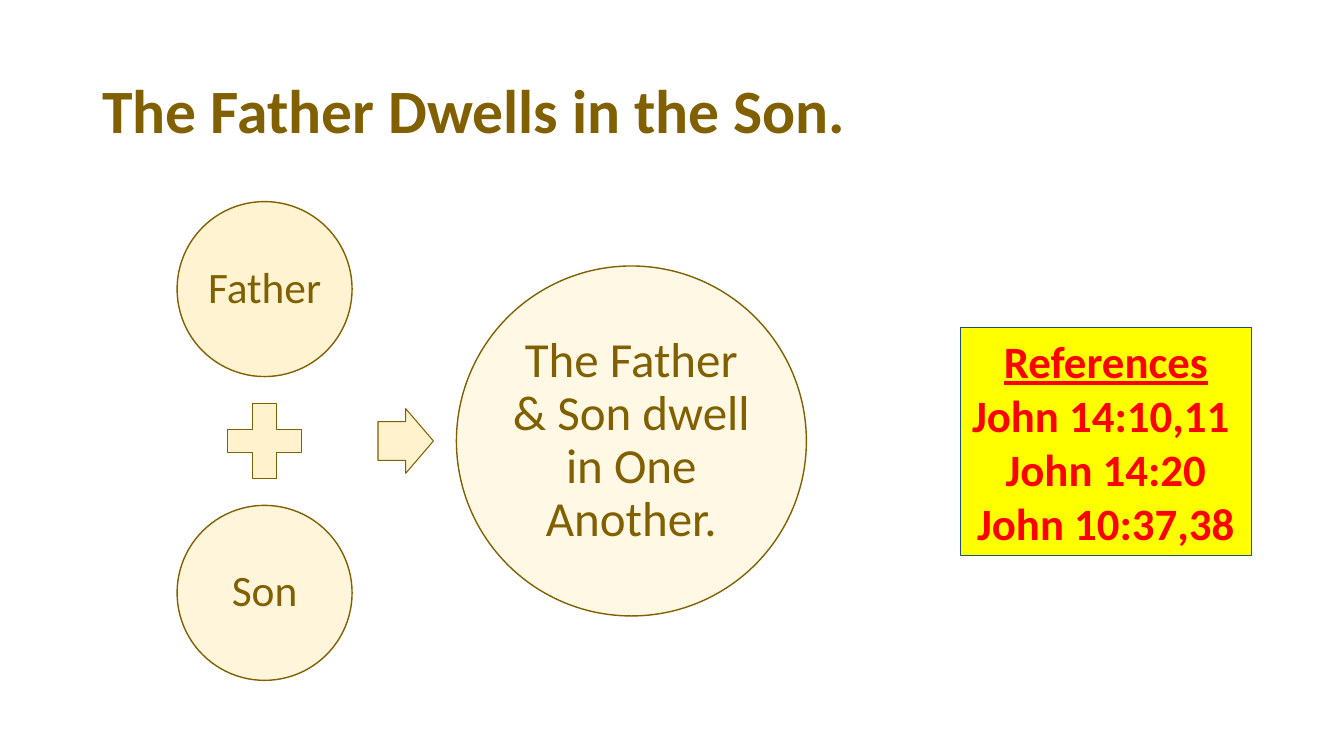
from lxml import etree
from pptx import Presentation
from pptx import util as u
from pptx.dml.color import RGBColor
from pptx.enum import shapes, text
from pptx.oxml.ns import qn

COLORS = {"brown": "806000", "cream": "FFF2CC", "yellow": "FFFF00",
          "red": "FF0000", "navy": "1F4E79"}
FONT = "Calibri"
KIND = shapes.MSO_SHAPE


def color(name):
    return RGBColor.from_string(COLORS[name])


def style_paragraph(paragraph, size, name, align, bold=False):
    paragraph.alignment = align
    font = paragraph.font
    font.name, font.size, font.bold = FONT, u.Pt(size), bold
    font.color.rgb = color(name)


def add_block(slide, kind, box, fill="cream", line="brown", width=0.75):
    shape = slide.shapes.add_shape(kind, *(u.Pt(length) for length in box))
    shape.shadow.inherit = False
    shape.fill.solid()
    shape.fill.fore_color.rgb = color(fill)
    shape.line.color.rgb = color(line)
    shape.line.width = u.Pt(width)
    return shape


def add_circle(slide, left, top, diameter, label, size, opacity, inset):
    box = (left, top, diameter, diameter)
    circle = add_block(slide, KIND.OVAL, box, width=1)
    # Opacity of the fill, in percent
    fill_color = circle.fill._xPr.find(qn("a:solidFill"))[0]
    etree.SubElement(fill_color, qn("a:alpha"), val=str(opacity * 1000))
    frame = circle.text_frame
    frame.word_wrap = True
    frame.margin_left = frame.margin_right = u.Pt(inset)
    frame.margin_top = frame.margin_bottom = u.Pt(inset)
    paragraph = frame.paragraphs[0]
    paragraph.text = label
    paragraph.line_spacing = 0.9
    style_paragraph(paragraph, size, "brown", text.PP_ALIGN.CENTER)


def add_title(slide, left, top, width, height, title):
    placeholder = slide.shapes.title
    placeholder.left, placeholder.top = u.Pt(left), u.Pt(top)
    placeholder.width, placeholder.height = u.Pt(width), u.Pt(height)
    frame = placeholder.text_frame
    frame.text = title
    frame.auto_size = text.MSO_AUTO_SIZE.NONE
    frame.vertical_anchor = text.MSO_ANCHOR.MIDDLE
    paragraph = frame.paragraphs[0]
    paragraph.line_spacing = 0.9
    style_paragraph(paragraph, 44, "brown", text.PP_ALIGN.LEFT, bold=True)


def add_equation(slide, left, top, width, height):
    middle = top + height / 2
    large = 250
    small = large / 2
    plus = 72.6

    # Two terms with a plus between them
    add_circle(slide, left, top, small, "Father", 31, 90, 3)
    add_block(slide, KIND.MATH_PLUS, (left + (small - plus) / 2,
                                      middle - plus / 2, plus, plus))
    add_circle(slide, left, top + height - small, small, "Son", 31, 70, 3)

    # Arrow to the result
    arrow_width, arrow_height = 39.6, 46.2
    arrow = add_block(slide, KIND.RIGHT_ARROW,
                      (left + small + 18.5, middle - arrow_height / 2,
                       arrow_width, arrow_height))
    arrow.adjustments[0] = 0.6
    add_circle(slide, left + width - large, middle - large / 2, large,
               "The Father & Son dwell in One Another.", 35, 50, 3.5)


def add_references(slide, left, top, width, height, heading, verses):
    panel = add_block(slide, KIND.RECTANGLE, (left, top, width, height),
                      fill="yellow", line="navy")
    frame = panel.text_frame
    frame.word_wrap = False
    frame.auto_size = text.MSO_AUTO_SIZE.SHAPE_TO_FIT_TEXT
    frame.text = "\n".join([heading, *verses])
    for paragraph in frame.paragraphs:
        style_paragraph(paragraph, 32, "red", text.PP_ALIGN.CENTER, bold=True)
    frame.paragraphs[0].font.underline = True


def main():
    presentation = Presentation()
    presentation.slide_width, presentation.slide_height = u.Pt(960), u.Pt(540)
    slide = presentation.slides.add_slide(presentation.slide_layouts[5])
    add_title(slide, 66, 28.8, 828, 104.4, "The Father Dwells in the Son.")
    add_equation(slide, 126.5, 144, 449.5, 342)
    add_references(slide, 686.2, 234, 207.4, 162.7, "References",
                   ["John 14:10,11 ", "John 14:20", "John 10:37,38"])
    presentation.save("out.pptx")


if __name__ == "__main__":
    main()
